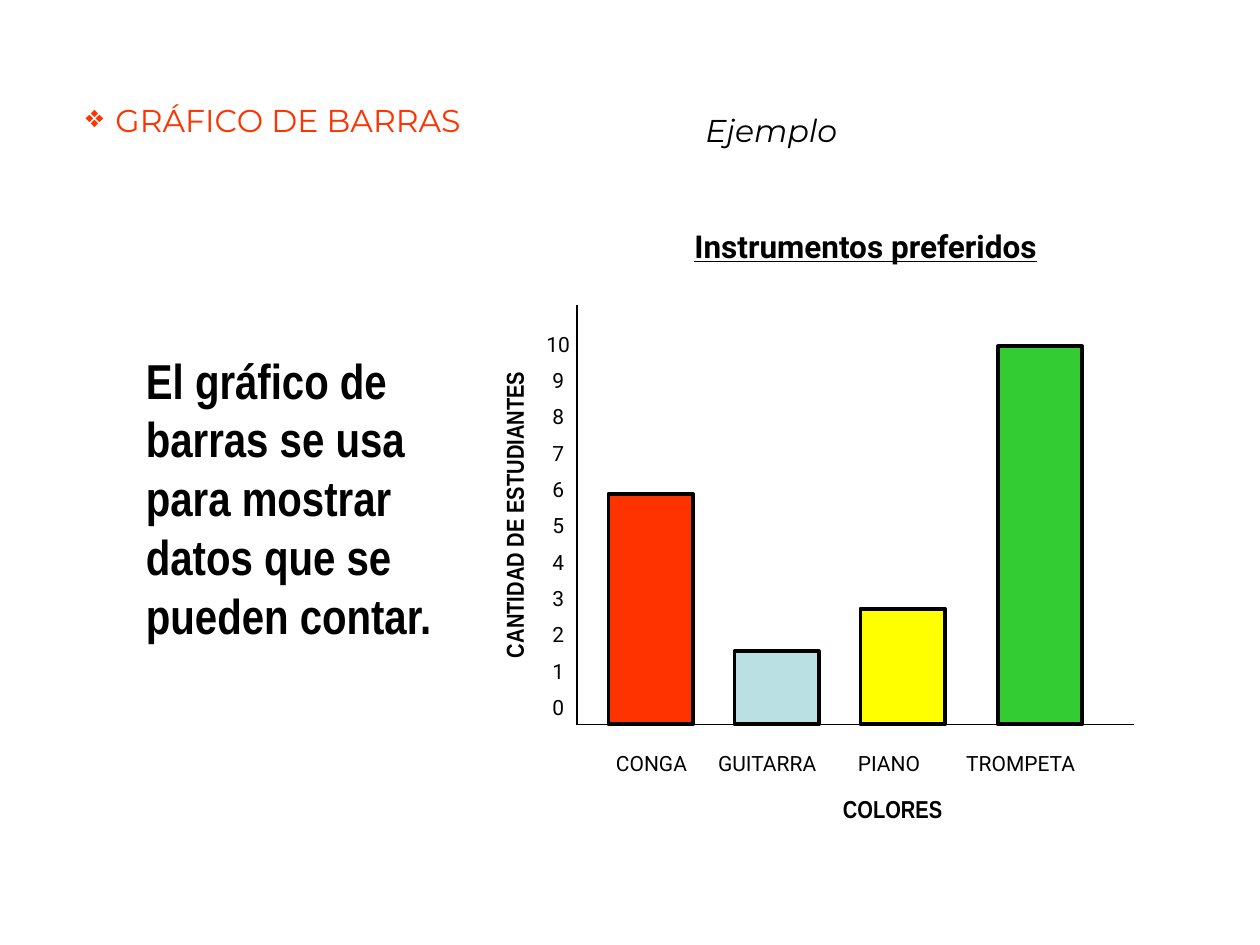
from lxml import etree
from pptx import Presentation
from pptx.dml.color import RGBColor
from pptx.enum.shapes import MSO_CONNECTOR, MSO_SHAPE
from pptx.enum.text import MSO_ANCHOR, MSO_AUTO_SIZE, PP_ALIGN
from pptx.oxml.ns import qn
from pptx.util import Inches, Pt

RECTANGLE = MSO_SHAPE.RECTANGLE
STRAIGHT = MSO_CONNECTOR.STRAIGHT
TOP = MSO_ANCHOR.TOP
NO_AUTOFIT = MSO_AUTO_SIZE.NONE
LEFT, CENTER = PP_ALIGN.LEFT, PP_ALIGN.CENTER

COLORS = {
    "ink": "000000",
    "red": "FF3300",
    "blue": "BBE0E3",
    "yellow": "FFFF00",
    "green": "33CC33",
}
DISPLAY, NARROW, PLAIN = "Montserrat", "Arial Narrow", "Roboto"


class SlideBuilder:
    def __init__(self, slide):
        self.slide = slide

    def color(self, name):
        return RGBColor.from_string(COLORS[name])

    def place(self, shape, box):
        shape.left, shape.top, shape.width, shape.height = map(Inches, box)

    def fill_text(self, shape, lines, size, font, color="ink", align=LEFT, gap=0,
                  bullet=None, tabs=(), bold=False, italic=False, underline=False):
        frame = shape.text_frame
        frame.word_wrap = True
        frame.auto_size = NO_AUTOFIT
        frame.vertical_anchor = TOP
        for index, line in enumerate(lines):
            paragraph = frame.add_paragraph() if index else frame.paragraphs[0]
            properties = paragraph._p.get_or_add_pPr()
            if bullet:
                etree.SubElement(properties, qn("a:buChar"), char=bullet)
            if tabs:
                stops = etree.SubElement(properties, qn("a:tabLst"))
                for stop in tabs:
                    etree.SubElement(stops, qn("a:tab"), pos=str(Inches(stop)), algn="l")
            paragraph.alignment = align
            paragraph.space_before = Pt(gap if index else 0)
            run = paragraph.add_run()
            run.text = line
            run.font.name = font
            run.font.size = Pt(size)
            run.font.bold = bold
            run.font.italic = italic
            run.font.underline = underline
            run.font.color.rgb = self.color(color)

    def title(self, box, text, **style):
        heading = self.slide.shapes.title
        self.place(heading, box)
        self.fill_text(heading, [text], **style)

    def text(self, box, lines, rotation=0, **style):
        label = self.slide.shapes.add_textbox(*map(Inches, box))
        label.rotation = rotation
        self.fill_text(label, lines, **style)

    def axis(self, start, end):
        line = self.slide.shapes.add_connector(STRAIGHT, *map(Inches, start + end))
        line.line.color.rgb = self.color("ink")
        line.line.width = Pt(0.75)
        etree.SubElement(line._element.spPr, qn("a:effectLst"))

    def bar(self, left, height, fill):
        column = self.slide.shapes.add_shape(
            RECTANGLE, *map(Inches, (left, BASELINE - height, BAR_WIDTH, height)))
        column.shadow.inherit = False
        column.fill.solid()
        column.fill.fore_color.rgb = self.color(fill)
        column.line.color.rgb = self.color("ink")
        column.line.width = Pt(2.25)


BASELINE = 5.75
AXIS_LEFT = 4.58
BAR_WIDTH = 0.67
BARS = [
    (4.83, 1.83, "red"),
    (5.83, 0.58, "blue"),
    (6.83, 0.92, "yellow"),
    (7.92, 3, "green"),
]
INSTRUMENTS = ["CONGA", "GUITARRA", "PIANO", "TROMPETA"]


def main():
    presentation = Presentation()
    presentation.slide_width = Inches(10)
    presentation.slide_height = Inches(7.5)
    page = SlideBuilder(presentation.slides.add_slide(presentation.slide_layouts[5]))

    page.title((0.58, 0.75, 4.5, 0.5), "GRÁFICO DE BARRAS",
               size=18, font=DISPLAY, color="red", bullet="❖")
    page.text((1.06, 2.73, 2.84, 2.46),
              ["El gráfico de barras se usa para mostrar datos que se pueden contar."],
              size=28, font=NARROW, bold=True)
    page.text((5.5, 0.83, 1.92, 0.4), ["Ejemplo"], size=18, font=DISPLAY, italic=True)

    page.axis((AXIS_LEFT, 2.42), (AXIS_LEFT, BASELINE))
    page.axis((AXIS_LEFT, BASELINE), (9, BASELINE))
    axis_title = dict(size=14, font=NARROW, bold=True, align=CENTER)
    page.text((2.83, 3.92, 2.5, 0.33), ["CANTIDAD DE ESTUDIANTES"],
              rotation=270, **axis_title)
    page.text((5.42, 6.25, 3.33, 0.33), ["COLORES"], **axis_title)
    page.text((4.79, 5.91, 4.38, 0.3), ["\t".join(INSTRUMENTS)],
              size=12, font=PLAIN, tabs=(0.81, 1.92, 2.78))
    page.text((AXIS_LEFT, 1.75, 4.58, 0.4), ["Instrumentos preferidos"],
              size=18, font=PLAIN, bold=True, underline=True, align=CENTER)
    page.text((4.17, 2.58, 0.52, 3.3), [str(count) for count in range(10, -1, -1)],
              size=12, font=PLAIN, align=CENTER, gap=6.35)

    for left, height, fill in BARS:
        page.bar(left, height, fill)

    presentation.save("out.pptx")


if __name__ == "__main__":
    main()
